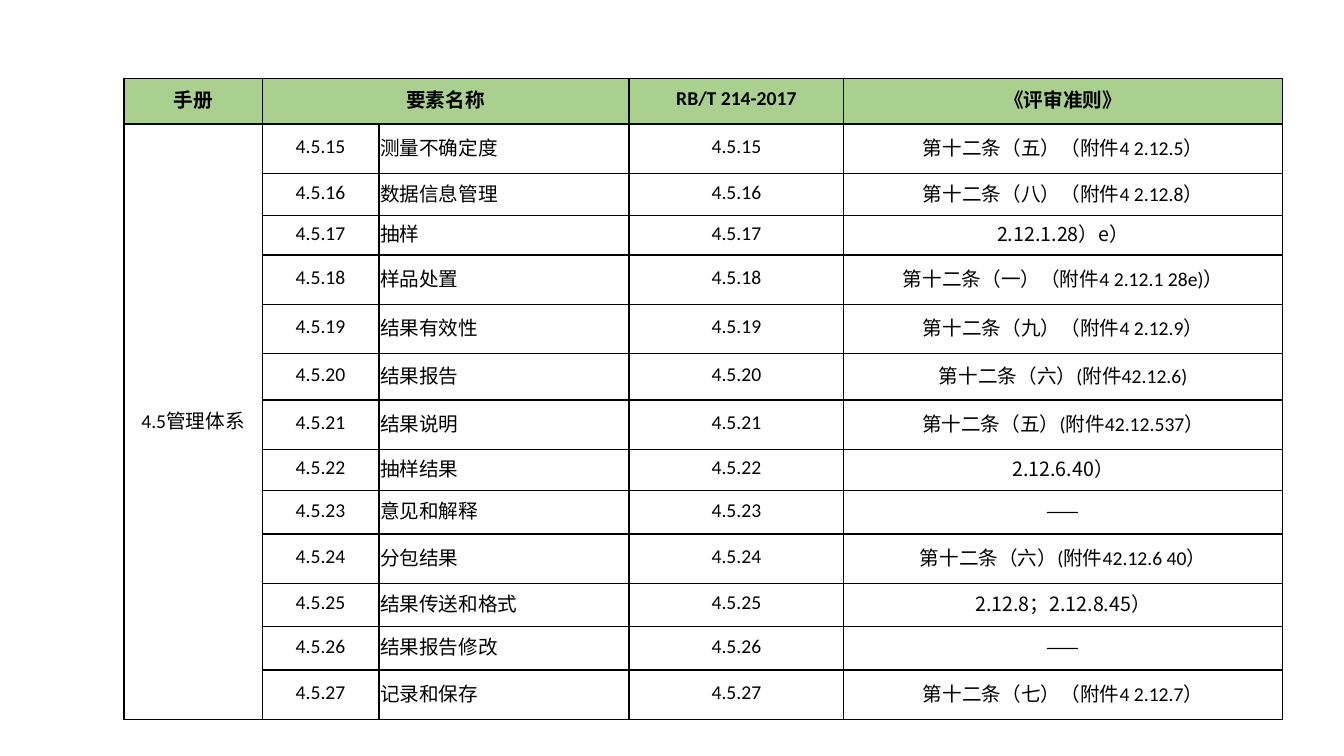
from dataclasses import dataclass

from lxml.etree import SubElement
from pptx import Presentation
from pptx.dml.color import RGBColor
from pptx.enum.text import MSO_ANCHOR as Anchor, PP_ALIGN as Align
from pptx.oxml.ns import qn
from pptx.table import _Cell as Cell
from pptx.util import Inches, Pt

BLACK = RGBColor(0x00, 0x00, 0x00)
HEADER_GREEN = RGBColor(0xA9, 0xD0, 0x8E)
LATIN_FONT = "Calibri"
CHINESE_FONT = "Noto Sans CJK SC"
TEXT_SIZE = Pt(14)
BORDER_WIDTH = Pt(1)

SLIDE_WIDTH, SLIDE_HEIGHT = 13.33, 7.5
TABLE_LEFT, TABLE_TOP = 1.23, 0.78
COLUMN_WIDTHS = (1.37, 1.16, 2.48, 2.13, 4.35)
HEADER_HEIGHT = 0.45
FIRST_CLAUSE = 15
RUN_BREAK = "|"


@dataclass(frozen=True)
class Element:
    """One clause: its name, the matching criteria (runs split by |), row height."""
    name: str
    criteria: str
    height: float


HEADERS = {0: "手册", 1: "要素名称", 3: "RB/T 214-2017", 4: "《评审准则》"}
MANUAL_SECTION = "4.5|管理体系"
ELEMENTS = (
    Element("测量不确定度", "第十二条（五）（附件|4 2.12.5|）", 0.49),
    Element("数据信息管理", "第十二条（八）（附件|4 2.12.8|）", 0.42),
    Element("抽样", "2.12.1.28）e）", 0.39),
    Element("样品处置", "第十二条（一）（附件|4 2.12.1 28e)|）", 0.49),
    Element("结果有效性", "第十二条（九）（附件|4 2.12.9|）", 0.49),
    Element("结果报告", "第十二条（六）|(|附件|42.12.6)", 0.46),
    Element("结果说明", "第十二条（五）|(|附件|42.12.537|）", 0.49),
    Element("抽样结果", "2.12.6.40）", 0.41),
    Element("意见和解释", "——", 0.43),
    Element("分包结果", "第十二条（六）|(|附件|42.12.6 40|）", 0.49),
    Element("结果传送和格式", "2.12.8；2.12.8.45）", 0.43),
    Element("结果报告修改", "——", 0.43),
    Element("记录和保存", "第十二条（七）（附件|4 2.12.7|）", 0.49),
)


def add_borders(cell: Cell) -> None:
    properties = cell._tc.get_or_add_tcPr()
    for position, side in enumerate(("lnL", "lnR", "lnT", "lnB")):
        line = SubElement(properties, qn(f"a:{side}"), w=str(BORDER_WIDTH))
        SubElement(SubElement(line, qn("a:solidFill")), qn("a:srgbClr"), val=str(BLACK))
        properties.insert(position, line)


def style_cell(cell: Cell, is_header: bool) -> None:
    cell.margin_left = cell.margin_right = cell.margin_top = Inches(0.01)
    cell.margin_bottom = Inches(0.05)
    cell.vertical_anchor = Anchor.MIDDLE
    if is_header:
        cell.fill.solid()
        cell.fill.fore_color.rgb = HEADER_GREEN
    else:
        cell.fill.background()
    add_borders(cell)


def write(cell: Cell, content: str, bold: bool = False, align: Align = Align.CENTER) -> None:
    """Fill a cell, giving pure ASCII runs the Latin font and others the Chinese one."""
    paragraph = cell.text_frame.paragraphs[0]
    paragraph.alignment = align
    for part in content.split(RUN_BREAK):
        run = paragraph.add_run()
        run.text = part
        font = run.font
        font.size, font.bold = TEXT_SIZE, bold
        font.color.rgb = BLACK
        font.name = LATIN_FONT if part.isascii() else CHINESE_FONT
        SubElement(run._r.get_or_add_rPr(), qn("a:ea"), typeface=CHINESE_FONT)


def main() -> None:
    deck = Presentation()
    deck.slide_width, deck.slide_height = Inches(SLIDE_WIDTH), Inches(SLIDE_HEIGHT)
    slide = deck.slides.add_slide(deck.slide_layouts[6])

    row_heights = (HEADER_HEIGHT, *(element.height for element in ELEMENTS))
    comparison = slide.shapes.add_table(
        len(row_heights), len(COLUMN_WIDTHS), Inches(TABLE_LEFT), Inches(TABLE_TOP),
        Inches(sum(COLUMN_WIDTHS)), Inches(sum(row_heights))).table
    comparison.first_row = comparison.horz_banding = False
    for column, width in zip(comparison.columns, COLUMN_WIDTHS):
        column.width = Inches(width)
    for index, (row, height) in enumerate(zip(comparison.rows, row_heights)):
        row.height = Inches(height)
        for cell in row.cells:
            style_cell(cell, is_header=index == 0)

    comparison.cell(0, 1).merge(comparison.cell(0, 2))
    comparison.cell(1, 0).merge(comparison.cell(len(ELEMENTS), 0))
    for column, header in HEADERS.items():
        write(comparison.cell(0, column), header, bold=True)
    write(comparison.cell(1, 0), MANUAL_SECTION)
    for index, element in enumerate(ELEMENTS):
        clause = f"4.5.{FIRST_CLAUSE + index}"
        row = index + 1
        write(comparison.cell(row, 1), clause)
        write(comparison.cell(row, 2), element.name, align=Align.LEFT)
        write(comparison.cell(row, 3), clause)
        write(comparison.cell(row, 4), element.criteria)

    deck.save("out.pptx")


if __name__ == "__main__":
    main()
